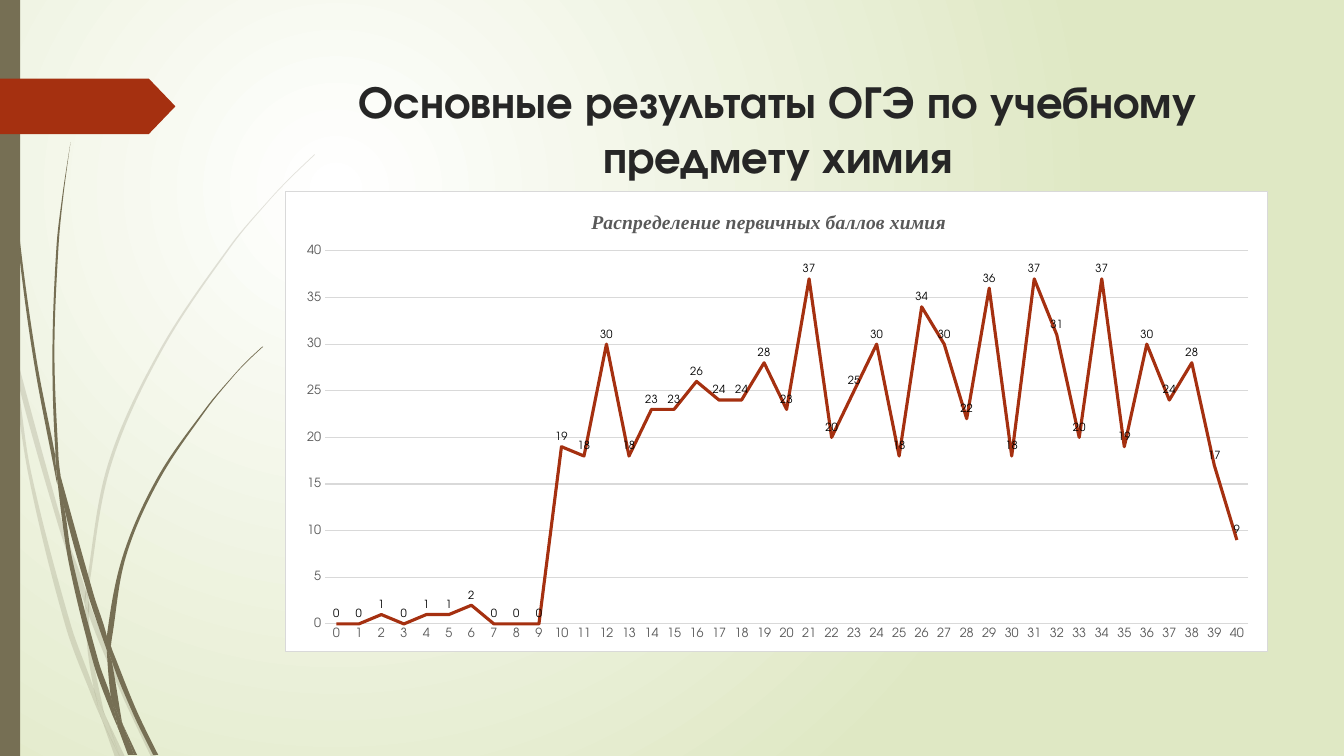
from dataclasses import dataclass

from lxml.etree import SubElement
from pptx import Presentation
from pptx.chart.data import CategoryChartData
from pptx.dml.color import RGBColor
from pptx.enum.chart import XL_CHART_TYPE, XL_LABEL_POSITION, XL_TICK_MARK
from pptx.enum.shapes import MSO_SHAPE
from pptx.enum.text import MSO_ANCHOR, MSO_AUTO_SIZE, PP_ALIGN
from pptx.oxml import parse_xml
from pptx.oxml.ns import nsdecls, qn
from pptx.util import Inches, Pt


@dataclass(frozen=True)
class Theme:
    """Colours, fonts and type sizes of the slide."""
    white: str = "FFFFFF"
    green: str = "DFE8C4"
    olive: str = "766F54"
    rust: str = "A53010"
    ink: str = "262626"
    black: str = "000000"
    grey: str = "595959"
    rule: str = "D9D9D9"
    font: str = "TeX Gyre Adventor"
    chart_title_font: str = "Times New Roman"
    title_size: float = 32.4
    chart_title_size: float = 14
    axis_size: float = 9
    label_size: float = 8
    rule_width: float = 0.75
    series_width: float = 2.25


THEME = Theme()
TITLE = "Основные результаты ОГЭ по учебному предмету химия"
CHART_TITLE = "Распределение первичных баллов химия\t"
PUPILS = [0, 0, 1, 0, 1, 1, 2, 0, 0, 0, 19, 18, 30, 18, 23, 23, 26, 24, 24, 28, 23,
          37, 20, 25, 30, 18, 34, 30, 22, 36, 18, 37, 31, 20, 37, 19, 30, 24, 28, 17, 9]
PALE_GRASS = [
    [(0.11, 3.5), (0.09, 3.22), (0, 2.82), (0, 2.99), (0.1, 3.44)],
    [(0.58, 5.22), (0.84, 5.99), (0.85, 5.86), (0.62, 5.2), (0.14, 3.45), (0.17, 3.76)],
    [(0.92, 6.07), (0.88, 5.96), (0.88, 6.1), (1.23, 6.94), (1.5, 7.51), (1.55, 7.51), (1.27, 6.92)],
    [(1.19, 7.51), (1.24, 7.51), (1.05, 7.11)],
    [(0.93, 6.83), (0.7, 6.19), (0.31, 4.69), (0.17, 3.76), (0.11, 3.5), (0.28, 4.7),
     (0.65, 6.21), (0.92, 6.93), (1.01, 7.14), (0.99, 7.07)],
    [(0.84, 5.99), (0.87, 6.46), (0.93, 6.83), (0.96, 6.92), (1.05, 7.11), (1.03, 7.06),
     (0.91, 6.46), (0.88, 6.1), (0.88, 6.08)],
    [(0.88, 5.84), (1.1, 4.62), (1.6, 3.49), (2.29, 2.45), (2.68, 1.98), (2.9, 1.75), (3.12, 1.54),
     (3.12, 1.53), (2.89, 1.75), (2.68, 1.97), (2.28, 2.44), (1.58, 3.48), (1.07, 4.61),
     (0.85, 5.84), (0.85, 5.86), (0.88, 5.96)],
    [(1.01, 7.14), (1.14, 7.51), (1.19, 7.51)],
    [(0.88, 6.08), (0.88, 6.1), (0.88, 5.96), (0.85, 5.86), (0.84, 5.99)],
    [(0.96, 6.92), (0.93, 6.83), (0.99, 7.07), (1.01, 7.14), (1.19, 7.51), (1.05, 7.11)],
]
DARK_GRASS = [
    [(0.07, 1.1), (0.17, 2.33), (0.33, 3.55), (0.56, 4.77), (0.57, 4.81), (0.55, 4.57), (0.55, 4.53),
     (0.36, 3.55), (0.19, 2.32), (0.08, 1.09), (0.05, 0.48), (0.04, 0), (0.03, 0), (0.04, 0.48)],
    [(0.88, 5.92), (1.06, 6.45), (1.06, 6.31), (0.93, 5.9), (0.6, 4.72), (0.64, 5.05)],
    [(1.13, 6.49), (1.1, 6.41), (1.11, 6.56), (1.32, 7.08), (1.52, 7.49), (1.57, 7.49), (1.36, 7.06)],
    [(1.1, 6.91), (0.98, 6.57), (0.72, 5.56), (0.64, 5.05), (0.57, 4.77), (0.68, 5.57),
     (0.93, 6.59), (1.11, 7.08), (1.17, 7.22), (1.16, 7.17)],
    [(0.6, 4.72), (0.58, 4.53), (0.54, 3.49), (0.58, 2.45), (0.63, 1.93), (0.7, 1.41),
     (0.62, 1.93), (0.56, 2.45), (0.52, 3.49), (0.55, 4.49)],
    [(1.33, 7.49), (1.36, 7.49), (1.22, 7.19)],
    [(0.57, 4.77), (0.64, 5.05), (0.6, 4.72), (0.55, 4.49), (0.55, 4.53)],
    [(1.11, 6.33), (1.25, 5.52), (1.58, 4.76), (2.05, 4.06), (2.31, 3.74), (2.45, 3.59), (2.61, 3.44),
     (2.6, 3.44), (2.45, 3.58), (2.31, 3.73), (2.04, 4.05), (1.56, 4.74), (1.22, 5.51),
     (1.06, 6.31), (1.1, 6.41)],
    [(1.17, 7.22), (1.27, 7.49), (1.31, 7.49)],
    [(1.06, 6.45), (1.1, 6.91), (1.16, 7.06), (1.22, 7.19), (1.21, 7.16), (1.11, 6.56), (1.09, 6.51)],
    [(1.06, 6.45), (1.09, 6.51), (1.11, 6.56), (1.1, 6.41), (1.06, 6.31), (1.06, 6.33)],
    [(1.16, 7.06), (1.1, 6.91), (1.16, 7.17), (1.17, 7.22), (1.3, 7.49), (1.33, 7.49), (1.22, 7.19)],
]


def style_font(font, size, color, name=THEME.font, bold=False, italic=False):
    """Set all the type properties of a font."""
    font.name, font.size, font.bold, font.italic = name, Pt(size), bold, italic
    font.color.rgb = RGBColor.from_string(color)


def style_line(line, color, width):
    """Give a line its colour and width."""
    line.color.rgb, line.width = RGBColor.from_string(color), Pt(width)


def fill_shape(shape, color, alpha=100):
    """Fill a shape flatly, without outline or shadow."""
    shape.shadow.inherit = False
    shape.line.fill.background()
    shape.fill.solid()
    shape.fill.fore_color.rgb = RGBColor.from_string(color)
    if alpha < 100:
        SubElement(shape.element.spPr.find(qn("a:solidFill"))[0], qn("a:alpha"), val=str(alpha * 1000))


def tangent(before, here, after):
    """Return the unit direction of a smooth outline, or zero at a corner."""
    arriving, leaving = here - before, after - here
    straight = (arriving * leaving.conjugate()).real > 0.8 * abs(arriving) * abs(leaving)
    return (after - before) / abs(after - before) if straight else 0


def add_grass(slide, outline, alpha):
    """Draw one piece of a grass stalk with smooth edges."""
    points = [(1000 * x, 1000 * y) for x, y in outline]
    builder = slide.shapes.build_freeform(*points[0], scale=Inches(1) / 1000)
    builder.add_line_segments(points[1:] + points[:1], close=True)
    stalk = builder.convert_to_shape()
    fill_shape(stalk, THEME.olive, alpha)
    corner = complex(*map(min, zip(*points)))
    spots = [complex(*point) - corner for point in points]
    count = len(spots)
    slopes = [tangent(spots[i - 1], spots[i], spots[(i + 1) % count]) for i in range(count)]
    for i, segment in enumerate(stalk.element.findall(".//" + qn("a:lnTo"))):
        j = (i + 1) % count
        reach = abs(spots[j] - spots[i]) / 3
        segment.tag = qn("a:cubicBezTo")
        for place, spot in enumerate((spots[i] + reach * slopes[i], spots[j] - reach * slopes[j])):
            handle = segment.makeelement(qn("a:pt"), x=str(round(spot.real)), y=str(round(spot.imag)))
            segment.insert(place, handle)


def add_block(slide, kind, color, top, width, height):
    """Add a flat preset shape at the left edge of the slide."""
    block = slide.shapes.add_shape(kind, 0, Inches(top), Inches(width), Inches(height))
    fill_shape(block, color)
    return block


def paint_background(slide):
    """Fill the background with a circular gradient."""
    fill = slide.background.fill
    fill.gradient()
    for stop, color in zip(fill.gradient_stops, (THEME.white, THEME.green)):
        stop.color.rgb = RGBColor.from_string(color)
    gradient = slide.element.find(".//" + qn("a:gradFill"))
    gradient.replace(gradient.find(qn("a:lin")), parse_xml(
        f'<a:path {nsdecls("a")} path="circle">'
        '<a:fillToRect l="50000" t="50000" r="100000" b="100000"/></a:path>'))


def write_title(slide):
    """Place and format the slide title."""
    box = slide.shapes.title
    box.left, box.top, box.width, box.height = map(Inches, (2.84, 0.68, 9.75, 1.2))
    frame = box.text_frame
    frame.word_wrap, frame.auto_size = True, MSO_AUTO_SIZE.NONE
    frame.vertical_anchor = MSO_ANCHOR.TOP
    frame.paragraphs[0].alignment = PP_ALIGN.CENTER
    span = frame.paragraphs[0].add_run()
    span.text = TITLE
    style_font(span.font, THEME.title_size, THEME.ink, bold=True)


def frame_chart(chart):
    """Give the chart a bordered area and a fixed plot position."""
    chart.element.find(qn("c:chart")).addnext(parse_xml(
        f'<c:spPr {nsdecls("c", "a")}><a:solidFill><a:srgbClr val="{THEME.white}"/>'
        f'</a:solidFill><a:ln w="{Pt(THEME.rule_width)}"><a:solidFill>'
        f'<a:srgbClr val="{THEME.rule}"/></a:solidFill></a:ln></c:spPr>'))
    plot_area = chart.element.find(".//" + qn("c:plotArea"))
    for layout in plot_area.findall(qn("c:layout")):
        plot_area.remove(layout)
    plot_area.insert(0, parse_xml(
        f'<c:layout {nsdecls("c")}><c:manualLayout><c:layoutTarget val="inner"/>'
        '<c:xMode val="edge"/><c:yMode val="edge"/><c:x val="0.04"/><c:y val="0.13"/>'
        '<c:w val="0.94"/><c:h val="0.81"/></c:manualLayout></c:layout>'))


def style_axes(chart):
    """Format both axes and the horizontal grid."""
    scale = chart.value_axis
    for axis in (chart.category_axis, scale):
        axis.major_tick_mark = axis.minor_tick_mark = XL_TICK_MARK.NONE
        style_font(axis.tick_labels.font, THEME.axis_size, THEME.grey)
    style_line(chart.category_axis.format.line, THEME.rule, THEME.rule_width)
    scale.minimum_scale, scale.maximum_scale, scale.major_unit = 0, 40, 5
    scale.format.line.fill.background()
    style_line(scale.major_gridlines.format.line, THEME.rule, THEME.rule_width)


def add_score_chart(slide):
    """Add the line chart of primary scores."""
    data = CategoryChartData()
    data.categories = [str(score) for score in range(len(PUPILS))]
    data.add_series("Series 1", PUPILS)
    area = map(Inches, (2.83, 1.89, 9.75, 4.58))
    chart = slide.shapes.add_chart(XL_CHART_TYPE.LINE, *area, data).chart
    style_font(chart.font, 10, THEME.black)
    chart.has_legend = False
    span = chart.chart_title.text_frame.paragraphs[0].add_run()
    span.text = CHART_TITLE
    style_font(span.font, THEME.chart_title_size, THEME.grey, THEME.chart_title_font, True, True)
    style_axes(chart)
    chart.plots[0].vary_by_categories = False
    series = chart.plots[0].series[0]
    series.smooth = False
    style_line(series.format.line, THEME.rust, THEME.series_width)
    labels = series.data_labels
    labels.show_value, labels.position = True, XL_LABEL_POSITION.ABOVE
    style_font(labels.font, THEME.label_size, THEME.black)
    frame_chart(chart)


def main():
    """Build the slide and save the deck."""
    deck = Presentation()
    deck.slide_width, deck.slide_height = Inches(13.33), Inches(7.5)
    page = deck.slides.add_slide(deck.slide_layouts[5])
    paint_background(page)
    for pieces, alpha in ((PALE_GRASS, 20), (DARK_GRASS, 100)):
        for outline in pieces:
            add_grass(page, outline, alpha)
    add_block(page, MSO_SHAPE.RECTANGLE, THEME.olive, 0, 0.2, 7.5)
    add_block(page, MSO_SHAPE.PENTAGON, THEME.rust, 0.78, 1.74, 0.55).adjustments[0] = 0.48
    write_title(page)
    add_score_chart(page)
    deck.save("out.pptx")


if __name__ == "__main__":
    main()
